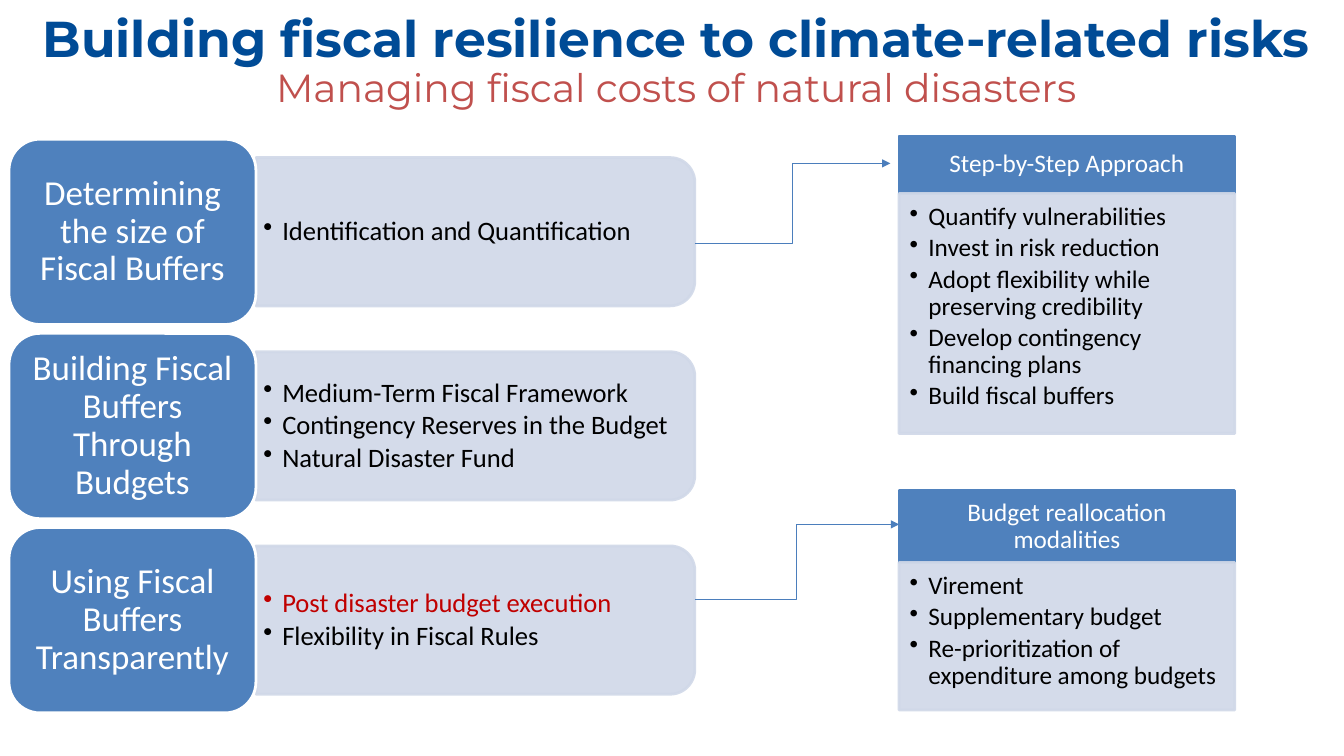
from dataclasses import dataclass

import lxml.etree
import pptx
import pptx.dml.color
import pptx.enum.shapes
import pptx.enum.text
import pptx.oxml.ns
import pptx.util

Pt = pptx.util.Pt
MSO_SHAPE = pptx.enum.shapes.MSO_SHAPE
ALIGN = pptx.enum.text.PP_ALIGN
ANCHOR = pptx.enum.text.MSO_ANCHOR
qn = pptx.oxml.ns.qn

BLUE, PALE, WHITE, BLACK, RED = "4F81BD", "D0D8E8", "FFFFFF", "000000", "C00000"
ARROW_BLUE, TITLE_BLUE, SUBTITLE_RED = "4B7EBC", "004B96", "C0504D"
STAGE_TOP, STAGE_PITCH = 99.4, 138.7
BULLET_INDENT = 13.5


@dataclass
class Box:
    left: float
    top: float
    width: float
    height: float


@dataclass
class Stage:
    heading: str
    points: list[str]
    highlight: str = ""


@dataclass
class Panel:
    heading: str
    points: list[str]
    top: float
    heading_height: float
    body_height: float


@dataclass
class Arrow:
    start: tuple[float, float]
    end: tuple[float, float]


STAGES = [
    Stage("Determining the size of Fiscal Buffers",
          ["Identification and Quantification"]),
    Stage("Building Fiscal Buffers Through Budgets",
          ["Medium-Term Fiscal Framework", "Contingency Reserves in the Budget",
           "Natural Disaster Fund"]),
    Stage("Using Fiscal Buffers Transparently",
          ["Post disaster budget execution", "Flexibility in Fiscal Rules"],
          highlight="Post disaster budget execution"),
]
PANELS = [
    Panel("Budget reallocation modalities",
          ["Virement", "Supplementary budget",
           "Re-prioritization of expenditure among budgets"], 350.6, 51.2, 105.4),
    Panel("Step-by-Step Approach",
          ["Quantify vulnerabilities", "Invest in risk reduction",
           "Adopt flexibility while preserving credibility",
           "Develop contingency financing plans", "Build fiscal buffers"],
          97.2, 41, 171.4),
]
ARROWS = [
    Arrow((496.2, 174), (636, 116.8)),
    Arrow((496.2, 428.4), (642.2, 374.6)),
]


def rgb(color: str) -> pptx.dml.color.RGBColor:
    return pptx.dml.color.RGBColor.from_string(color)


def set_all(target, **values) -> None:
    """Set each given attribute on the target."""
    for name, value in values.items():
        setattr(target, name, value)


def set_frame(tf, margins: tuple[float, float, float, float], anchor=ANCHOR.MIDDLE) -> None:
    left, top, right, bottom = map(Pt, margins)
    set_all(tf, word_wrap=True, vertical_anchor=anchor, margin_left=left,
            margin_top=top, margin_right=right, margin_bottom=bottom)


def add_run(p, text: str, size: float, color: str, font: str = "Calibri",
            bold: bool = False) -> None:
    r = p.add_run()
    r.text = text
    set_all(r.font, size=Pt(size), name=font, bold=bold)
    r.font.color.rgb = rgb(color)


def add_block(s, kind, box: Box, fill: str, line: str, alpha: int = 100):
    """Add a filled shape; alpha is its opacity in percent."""
    sp = s.shapes.add_shape(kind, Pt(box.left), Pt(box.top), Pt(box.width), Pt(box.height))
    sp.shadow.inherit = False
    sp.fill.solid()
    sp.fill.fore_color.rgb = rgb(fill)
    sp.line.color.rgb = rgb(line)
    sp.line.width = Pt(2)
    if alpha < 100:
        for node in sp._element.spPr.iter(qn("a:srgbClr")):
            lxml.etree.SubElement(node, qn("a:alpha")).set("val", str(alpha * 1000))
    return sp


def add_textbox(s, box: Box):
    return s.shapes.add_textbox(Pt(box.left), Pt(box.top), Pt(box.width), Pt(box.height))


def write_heading(tf, text: str, size: float) -> None:
    p = tf.paragraphs[0]
    set_all(p, alignment=ALIGN.CENTER, line_spacing=0.9)
    add_run(p, text, size, WHITE)


def write_bullets(tf, points: list[str], size: float, highlight: str = "") -> None:
    for i, point in enumerate(points):
        p = tf.add_paragraph() if i else tf.paragraphs[0]
        pPr = p._p.get_or_add_pPr()
        pPr.set("marL", str(Pt(BULLET_INDENT)))
        pPr.set("indent", str(-Pt(BULLET_INDENT)))
        lxml.etree.SubElement(pPr, qn("a:buChar")).set("char", "•")
        set_all(p, alignment=ALIGN.LEFT, line_spacing=0.9, space_after=Pt(2.8))
        add_run(p, point, size, RED if point == highlight else BLACK)


def add_title(s) -> None:
    tf = add_textbox(s, Box(0, 8, 966, 70.5)).text_frame
    set_frame(tf, (0, 10, 0, 0))
    p = tf.paragraphs[0]
    set_all(p, alignment=ALIGN.CENTER, line_spacing=Pt(30.3))
    add_run(p, "Building fiscal resilience to climate-related risks", 36, TITLE_BLUE,
            "Montserrat", True)
    p.add_line_break()
    add_run(p, "Managing fiscal costs of natural disasters", 28, SUBTITLE_RED, "Montserrat")


def add_stage(s, stage: Stage, top: float) -> None:
    # The body is a tall tab turned a quarter to the right, so its text has its own box.
    body = add_block(s, MSO_SHAPE.ROUND_2_SAME_RECTANGLE,
                     Box(286.6, top - 90.6, 105.9, 313.5), PALE, PALE, 90)
    body.rotation = 90
    tf = add_textbox(s, Box(182.5, top + 18.6, 308, 95.4)).text_frame
    set_frame(tf, (5.7, 2.9, 5.7, 2.9))
    write_bullets(tf, stage.points, 19, stage.highlight)

    head = add_block(s, MSO_SHAPE.ROUNDED_RECTANGLE, Box(6.4, top, 176.4, 132.4), BLUE, WHITE)
    set_frame(head.text_frame, (7.2, 3.6, 7.2, 3.6))
    write_heading(head.text_frame, stage.heading, 25)


def add_panel(s, panel: Panel) -> None:
    left, width = 642.2, 239.8
    head = add_block(s, MSO_SHAPE.RECTANGLE,
                     Box(left, panel.top, width, panel.heading_height), BLUE, BLUE)
    set_frame(head.text_frame, (10, 5.8, 10, 5.8))
    write_heading(head.text_frame, panel.heading, 18)

    body = add_block(s, MSO_SHAPE.RECTANGLE,
                     Box(left, panel.top + panel.heading_height, width, panel.body_height),
                     PALE, PALE, 90)
    set_frame(body.text_frame, (7.5, 7.5, 10, 11.5), ANCHOR.TOP)
    write_bullets(body.text_frame, panel.points, 18)


def add_arrow(s, arrow: Arrow) -> None:
    cxn = s.shapes.add_connector(pptx.enum.shapes.MSO_CONNECTOR.ELBOW,
                                 *map(Pt, arrow.start + arrow.end))
    cxn.line.color.rgb = rgb(ARROW_BLUE)
    cxn.line.width = Pt(0.75)
    lxml.etree.SubElement(cxn.line._get_or_add_ln(), qn("a:tailEnd")).set("type", "triangle")
    lxml.etree.SubElement(cxn._element.spPr, qn("a:effectLst"))


def main() -> None:
    prs = pptx.Presentation()
    set_all(prs, slide_width=Pt(960), slide_height=Pt(540))
    s = prs.slides.add_slide(prs.slide_layouts[6])
    add_title(s)
    for i, stage in enumerate(STAGES):
        add_stage(s, stage, STAGE_TOP + i * STAGE_PITCH)
    for panel in PANELS:
        add_panel(s, panel)
    for arrow in ARROWS:
        add_arrow(s, arrow)
    prs.save("out.pptx")


if __name__ == "__main__":
    main()
